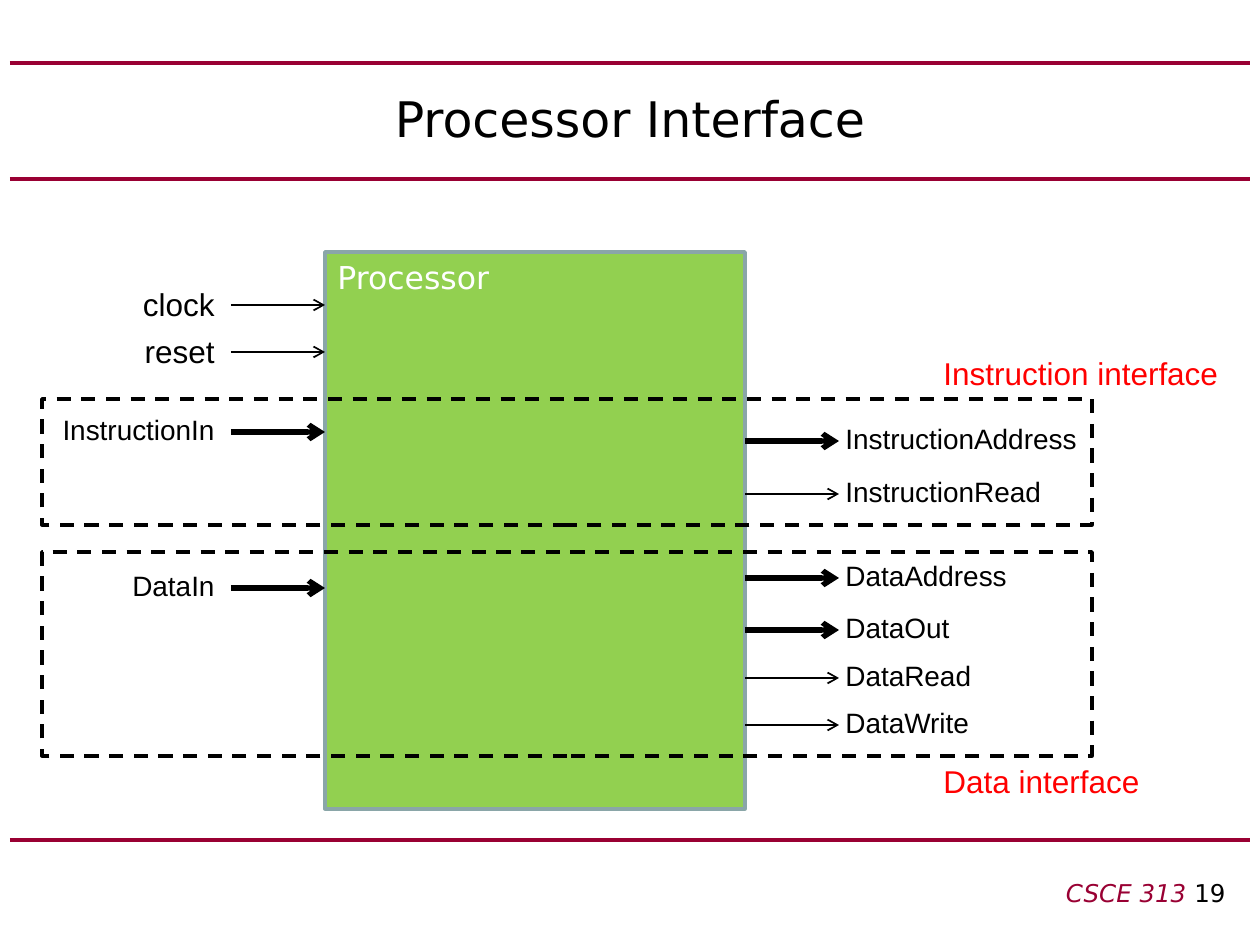
from dataclasses import dataclass

from lxml import etree
from pptx import Presentation
from pptx.dml.color import RGBColor
from pptx.enum.dml import MSO_LINE
from pptx.enum.shapes import MSO_CONNECTOR, MSO_SHAPE
from pptx.enum.text import MSO_ANCHOR, MSO_AUTO_SIZE, PP_ALIGN
from pptx.oxml.ns import qn
from pptx.util import Emu, Pt

LEFT, CENTER, RIGHT = PP_ALIGN.LEFT, PP_ALIGN.CENTER, PP_ALIGN.RIGHT
TOP, MIDDLE = MSO_ANCHOR.TOP, MSO_ANCHOR.MIDDLE
FIT_SHAPE = MSO_AUTO_SIZE.SHAPE_TO_FIT_TEXT
STRAIGHT, RECTANGLE = MSO_CONNECTOR.STRAIGHT, MSO_SHAPE.RECTANGLE
DASH = MSO_LINE.DASH

PX_PER_INCH = 126
HEADING_FONT, LABEL_FONT = "DejaVu Sans", "Arial"
BLACK, WHITE, RED = "000000", "FFFFFF", "FF0000"
GARNET, GREEN, GRAY_BLUE = "990033", "92D050", "8AA6A8"

RULE_YS = (63, 179, 840)
PROCESSOR_LEFT, PROCESSOR_RIGHT = 325, 745
WIRE_LENGTH = 94
LABEL_RISE = 26


@dataclass(frozen=True)
class Signal:
    name: str
    y: int
    is_bus: bool = False
    size: int = 16


@dataclass(frozen=True)
class Interface:
    name: str
    top: int
    height: int
    caption_top: int


INPUTS = (
    Signal("clock", 305, size=18),
    Signal("reset", 352, size=18),
    Signal("InstructionIn", 432, is_bus=True),
    Signal("DataIn", 588, is_bus=True),
)
OUTPUTS = (
    Signal("InstructionAddress", 441, is_bus=True),
    Signal("InstructionRead", 494),
    Signal("DataAddress", 578, is_bus=True),
    Signal("DataOut", 630, is_bus=True),
    Signal("DataRead", 678),
    Signal("DataWrite", 725),
)
INTERFACES = (
    Interface("Instruction interface", 399, 126, 348),
    Interface("Data interface", 552, 204, 756),
)


def px(length: int) -> Emu:
    return Emu(round(length * 914400 / PX_PER_INCH))


def color(value: str) -> RGBColor:
    return RGBColor.from_string(value)


def add_span(para, text: str, size: int, font: str, hue: str, italic: bool = False) -> None:
    span = para.add_run()
    span.text = text
    formats = {"size": Pt(size), "name": font, "italic": italic}
    for name, value in formats.items():
        setattr(span.font, name, value)
    span.font.color.rgb = color(hue)


def set_frame(shape, align, anchor=TOP, auto_size=MSO_AUTO_SIZE.NONE):
    """Format the text frame and return its first paragraph."""
    frame = shape.text_frame
    formats = {"word_wrap": True, "auto_size": auto_size, "vertical_anchor": anchor}
    for name, value in formats.items():
        setattr(frame, name, value)
    para = frame.paragraphs[0]
    para.alignment = align
    return para


def add_label(page, text: str, bounds: tuple, size: int, hue: str = BLACK, align=LEFT) -> None:
    box = page.shapes.add_textbox(*map(px, bounds))
    add_span(set_frame(box, align, auto_size=FIT_SHAPE), text, size, LABEL_FONT, hue)


def add_line(page, start: tuple, end: tuple, hue: str, width: float, arrow: bool = False) -> None:
    line = page.shapes.add_connector(STRAIGHT, *map(px, start + end))
    line.line.color.rgb = color(hue)
    line.line.width = Pt(width)
    if arrow:
        etree.SubElement(line.line._get_or_add_ln(), qn("a:tailEnd"), type="arrow")
    etree.SubElement(line._element.spPr, qn("a:effectLst"))


def add_rectangle(page, bounds: tuple, line_hue: str):
    box = page.shapes.add_shape(RECTANGLE, *map(px, bounds))
    box.shadow.inherit = False
    box.fill.background()
    box.line.color.rgb = color(line_hue)
    box.line.width = Pt(2)
    return box


def add_signal(page, signal: Signal, wire_left: int, label_left: int, label_width: int, align) -> None:
    add_line(page, (wire_left, signal.y), (wire_left + WIRE_LENGTH, signal.y),
             BLACK, 3 if signal.is_bus else 1, arrow=True)
    height = 52 if signal.size == 18 else 47
    add_label(page, signal.name, (label_left, signal.y - LABEL_RISE, label_width, height),
              signal.size, align=align)


def add_processor(page) -> None:
    box = add_rectangle(page, (PROCESSOR_LEFT, 252, PROCESSOR_RIGHT - PROCESSOR_LEFT, 557), GRAY_BLUE)
    box.fill.solid()
    box.fill.fore_color.rgb = color(GREEN)
    add_span(set_frame(box, LEFT), "Processor", 18, HEADING_FONT, WHITE)


def add_interface(page, interface: Interface) -> None:
    box = add_rectangle(page, (42, interface.top, 1050, interface.height), BLACK)
    box.line.dash_style = DASH
    add_label(page, interface.name, (931, interface.caption_top, 315, 50), 18, RED)


def add_title(page) -> None:
    title = page.shapes.title
    bounds = {"left": 63, "top": 63, "width": 1134, "height": 110}
    for name, value in bounds.items():
        setattr(title, name, px(value))
    add_span(set_frame(title, CENTER, MIDDLE), "Processor Interface", 28, HEADING_FONT, BLACK)


def add_footer(page) -> None:
    box = page.shapes.add_textbox(*map(px, (472, 872, 766, 42)))
    para = set_frame(box, RIGHT)
    add_span(para, "CSCE 313 ", 14, HEADING_FONT, GARNET, italic=True)
    add_span(para, "19", 14, HEADING_FONT, BLACK)


def main() -> None:
    deck = Presentation()
    deck.slide_width, deck.slide_height = px(1260), px(945)
    page = deck.slides.add_slide(deck.slide_layouts[5])
    for y in RULE_YS:
        add_line(page, (10, y), (1250, y), GARNET, 2.25)
    add_title(page)
    add_footer(page)
    add_processor(page)
    for signal in INPUTS:
        add_signal(page, signal, PROCESSOR_LEFT - WIRE_LENGTH, 42, 185, RIGHT)
    for signal in OUTPUTS:
        add_signal(page, signal, PROCESSOR_RIGHT, 833, 270, LEFT)
    for interface in INTERFACES:
        add_interface(page, interface)
    deck.save("out.pptx")


if __name__ == "__main__":
    main()
